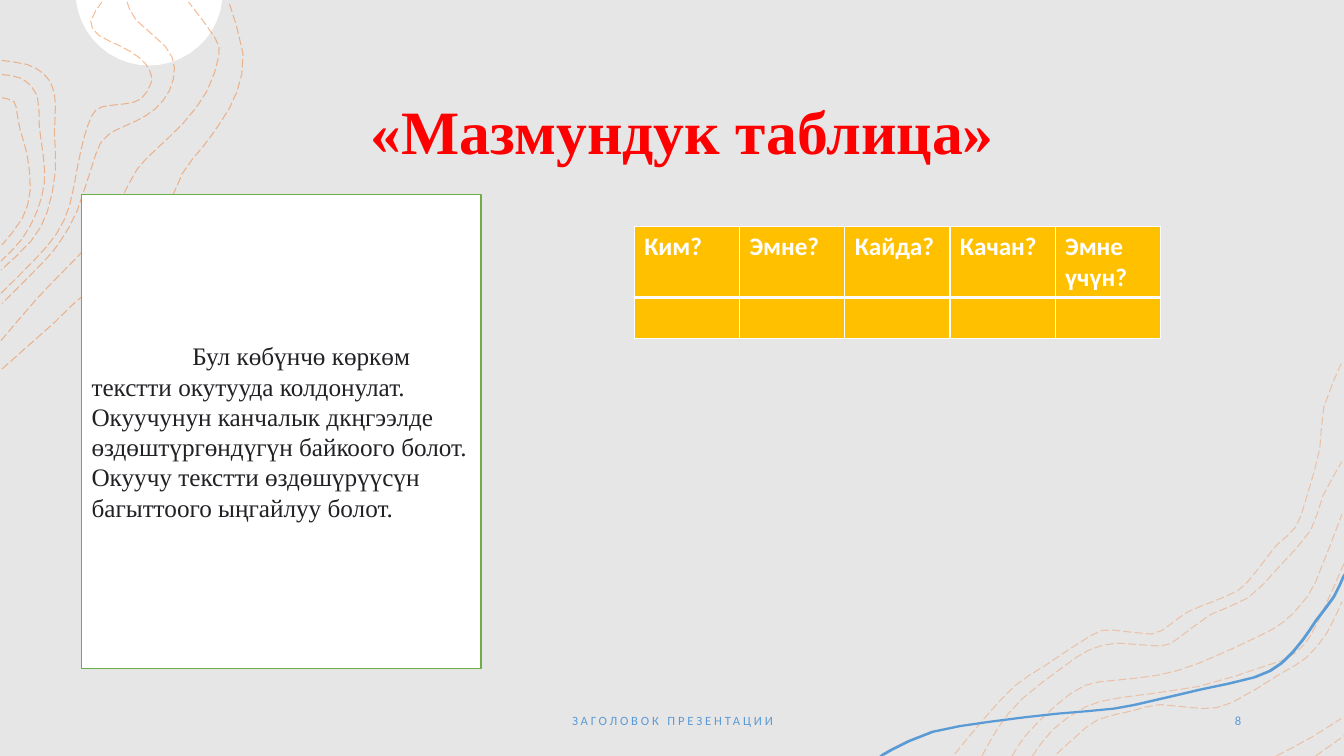
from collections import namedtuple
from math import cos, pi, sin

from lxml import etree
from pptx import Presentation
from pptx import util as u
from pptx.dml.color import RGBColor
from pptx.enum import dml, shapes, text
from pptx.oxml import ns

CELL = u.Inches(0.01)
COLUMNS, ROWS = 1333, 750
Box = namedtuple("Box", "left top width height")

GREY = RGBColor(0xE7, 0xE6, 0xE6)
WHITE = RGBColor(0xFF, 0xFF, 0xFF)
ORANGE = RGBColor(0xED, 0x7D, 0x31)
BLUE = RGBColor(0x5B, 0x9B, 0xD5)
RED = RGBColor(0xFF, 0x00, 0x00)
GREEN = RGBColor(0x70, 0xAD, 0x47)
INK = RGBColor(0x20, 0x21, 0x24)
GOLD = RGBColor(0xFF, 0xC0, 0x00)
SERIF, SANS = "Times New Roman", "Calibri"

LEFT_CONTOURS = [
    [(2, 366), (55, 319), (85, 291), (126, 269), (141, 255), (159, 223), (181, 172),
     (201, 146), (219, 121), (235, 91), (241, 53), (227, 2)],
    [(1, 338), (37, 296), (63, 269), (87, 244), (107, 219), (121, 196), (136, 168),
     (154, 149), (182, 122), (205, 91), (217, 56), (213, 37), (187, 2)],
    [(126, 2), (135, 20), (164, 46), (173, 67), (168, 90), (154, 108), (135, 120),
     (115, 129), (103, 138), (95, 153), (77, 208), (60, 239), (42, 261), (2, 301)],
    [(1, 291), (35, 257), (56, 232), (69, 204), (77, 165), (83, 138), (91, 115), (101, 106),
     (124, 103), (140, 98), (150, 82), (148, 69), (138, 57), (120, 46), (98, 35), (90, 21),
     (101, 2)],
    [(2, 60), (27, 64), (43, 73), (52, 86), (55, 104), (54, 132), (55, 169), (47, 210),
     (31, 239), (1, 268)],
    [(2, 74), (22, 78), (37, 95), (39, 126), (43, 155), (44, 181), (37, 209), (22, 237),
     (1, 259)],
    [(2, 97), (14, 101), (17, 113), (20, 129), (27, 154), (30, 189), (22, 217), (2, 243)],
]
RIGHT_CONTOURS = [
    [(147, 448), (176, 413), (207, 380), (237, 360), (283, 330), (303, 325), (342, 329),
     (360, 320), (378, 307), (405, 296), (429, 285), (445, 268), (466, 241), (485, 223),
     (496, 193), (509, 145), (513, 104), (531, 59)],
    [(174, 450), (190, 422), (213, 394), (254, 362), (280, 345), (308, 338), (351, 341),
     (369, 333), (400, 310), (438, 293), (468, 263), (500, 226), (512, 192), (531, 158)],
    [(505, 450), (533, 430)],
    [(466, 450), (500, 432), (530, 413)],
    [(248, 448), (268, 430), (289, 414), (324, 405), (351, 399), (393, 403), (422, 397),
     (469, 369), (495, 353), (516, 328), (531, 297)],
    [(224, 450), (244, 424), (277, 401), (312, 392), (389, 381), (457, 360), (476, 353),
     (493, 340), (508, 315), (533, 259)],
    [(204, 450), (217, 430), (247, 400), (276, 380), (305, 375), (348, 370), (389, 358),
     (449, 331), (473, 317), (490, 300), (505, 277), (531, 210)],
]
RIBBON_EDGE = [(72, 450), (83, 443), (124, 425), (181, 415), (248, 407), (304, 402), (343, 394),
               (390, 383), (443, 371), (470, 357), (491, 334), (504, 315), (522, 291), (531, 272)]
RIBBON_WIDTH = 2


def place(box):
    """Turn a box in grid cells into lengths."""
    return [int(side * CELL) for side in box]


def smooth(knots, steps=2):
    """Give points on a Catmull-Rom curve through the knots."""
    padded = [knots[0], *knots, knots[-1]]
    points = [knots[0]]
    for a, b, c, d in zip(padded, padded[1:], padded[2:], padded[3:]):
        for step in range(1, steps + 1):
            t = step / steps
            points.append(tuple(
                (2 * q + (r - p) * t + (2 * p - 5 * q + 4 * r - s) * t ** 2
                 + (3 * q - p - 3 * r + s) * t ** 3) / 2
                for p, q, r, s in zip(a, b, c, d)))
    return points


def draw_outline(page, box, points, closed):
    """Draw a bare outline through points relative to the box."""
    lengths = [(int((box.left + x) * CELL), int((box.top + y) * CELL)) for x, y in points]
    builder = page.shapes.build_freeform(*lengths[0])
    builder.add_line_segments(lengths[1:], close=closed)
    outline = builder.convert_to_shape()
    outline.shadow.inherit = False
    outline.fill.background()
    outline.line.fill.background()
    return outline


def fill_outline(page, box, points, color):
    """Draw a closed area of one colour."""
    area = draw_outline(page, box, points, True)
    area.fill.solid()
    area.fill.fore_color.rgb = color


def draw_contours(page, box, contours, opacity):
    """Draw dashed, see-through contour lines."""
    for knots in contours:
        line = draw_outline(page, box, smooth(knots), False).line
        line.color.rgb = ORANGE
        line.width = u.Pt(0.75)
        line.dash_style = dml.MSO_LINE.LONG_DASH
        color = line._ln.find(".//" + ns.qn("a:srgbClr"))
        etree.SubElement(color, ns.qn("a:alpha"), val=str(opacity * 1000))


def draw_left_corner(page, box):
    """Draw the white disc cut by the top edge and its contours."""
    center, drop, radius, steps = 148, -8, 73, 20
    start = 0.11
    angles = [start + (pi - 2 * start) * step / steps for step in range(steps + 1)]
    disc = [(center + radius * cos(angle), drop + radius * sin(angle)) for angle in angles]
    fill_outline(page, box, disc, WHITE)
    draw_contours(page, box, LEFT_CONTOURS, 50)


def draw_right_corner(page, box):
    """Draw the contours and the blue ribbon."""
    draw_contours(page, box, RIGHT_CONTOURS, 35)
    upper = smooth([*RIBBON_EDGE, (box.width, 269)])
    lower = [(min(x + RIBBON_WIDTH, box.width), min(y + RIBBON_WIDTH, box.height))
             for x, y in reversed(upper)]
    fill_outline(page, box, upper + lower, BLUE)


def write(frame, lines, size, font, color, align=None, bold=False, spacing=0):
    """Write paragraphs in one style."""
    frame.word_wrap = True
    frame.text = "\n".join(lines)
    for para in frame.paragraphs:
        para.alignment = align
        for span in para.runs:
            span.font.size, span.font.name, span.font.bold = u.Pt(size), font, bold
            span.font.color.rgb = color
            if spacing:
                span._r.get_or_add_rPr().set("spc", str(spacing * 100))


def add_label(page, box, line, *style, **options):
    """Add a vertically centred line of text."""
    frame = page.shapes.add_textbox(*place(box)).text_frame
    frame.vertical_anchor = text.MSO_ANCHOR.MIDDLE
    write(frame, [line], *style, **options)
    return frame


def add_note(page, box):
    """Add the framed explanation."""
    note = page.shapes.add_shape(shapes.MSO_SHAPE.RECTANGLE, *place(box))
    note.shadow.inherit = False
    note.fill.solid()
    note.fill.fore_color.rgb = WHITE
    note.line.color.rgb = GREEN
    note.line.width = u.Pt(1)
    note.text_frame.vertical_anchor = text.MSO_ANCHOR.MIDDLE
    write(note.text_frame, [
        "Бул көбүнчө көркөм текстти окутууда колдонулат.",
        "Окуучунун канчалык дкңгээлде өздөштүргөндүгүн байкоого болот.",
        "Окуучу текстти өздөшүрүүсүн багыттоого ыңгайлуу болот.",
    ], 18, SERIF, INK, text.PP_ALIGN.LEFT)
    first = note.text_frame.paragraphs[0]
    first._p.get_or_add_pPr().set("indent", str(u.Inches(1)))


def set_borders(cell, widths):
    """Give a cell white borders: left, right, top, bottom in points."""
    props = cell._tc.get_or_add_tcPr()
    for side, width in zip("LRTB", widths):
        border = etree.SubElement(props, ns.qn("a:ln" + side), w=str(u.Pt(width)))
        fill = etree.SubElement(border, ns.qn("a:solidFill"))
        etree.SubElement(fill, ns.qn("a:srgbClr"), val=str(WHITE))


def add_questions(page, box):
    """Add the table of questions with an empty answer row."""
    questions = ["Ким?", "Эмне?", "Кайда?", "Качан?", "Эмне үчүн?"]
    table = page.shapes.add_table(2, len(questions), *place(box)).table
    table.horz_banding = False
    answer_height = 41
    table.rows[0].height = (box.height - answer_height) * CELL
    table.rows[1].height = answer_height * CELL
    for column, question in enumerate(questions):
        header, answer = table.cell(0, column), table.cell(1, column)
        for cell, widths in ((header, (1, 1, 1, 3)), (answer, (1, 1, 3, 1))):
            set_borders(cell, widths)
            cell.fill.solid()
            cell.fill.fore_color.rgb = GOLD
        write(header.text_frame, [question], 18, SANS, WHITE, bold=True)


def main():
    """Build the slide and save it."""
    deck = Presentation()
    deck.slide_width, deck.slide_height = COLUMNS * CELL, ROWS * CELL
    page = deck.slides.add_slide(deck.slide_layouts[6])
    page.background.fill.solid()
    page.background.fill.fore_color.rgb = GREY
    draw_left_corner(page, Box(0, 0, 242, 366))
    draw_right_corner(page, Box(800, 300, 533, 450))
    title = add_label(page, Box(131, 61, 1092, 145), "«Мазмундук таблица»", 44, SERIF, RED,
                      text.PP_ALIGN.CENTER, bold=True)
    title.paragraphs[0].line_spacing = 0.9
    add_label(page, Box(442, 695, 450, 40), "ЗАГОЛОВОК ПРЕЗЕНТАЦИИ", 9, SANS, BLUE,
              text.PP_ALIGN.CENTER, spacing=2)
    add_label(page, Box(1083, 695, 158, 40), "8", 9, SANS, BLUE, text.PP_ALIGN.RIGHT, spacing=2)
    add_note(page, Box(81, 193, 396, 470))
    add_questions(page, Box(629, 225, 522, 111))
    deck.save("out.pptx")


if __name__ == "__main__":
    main()
